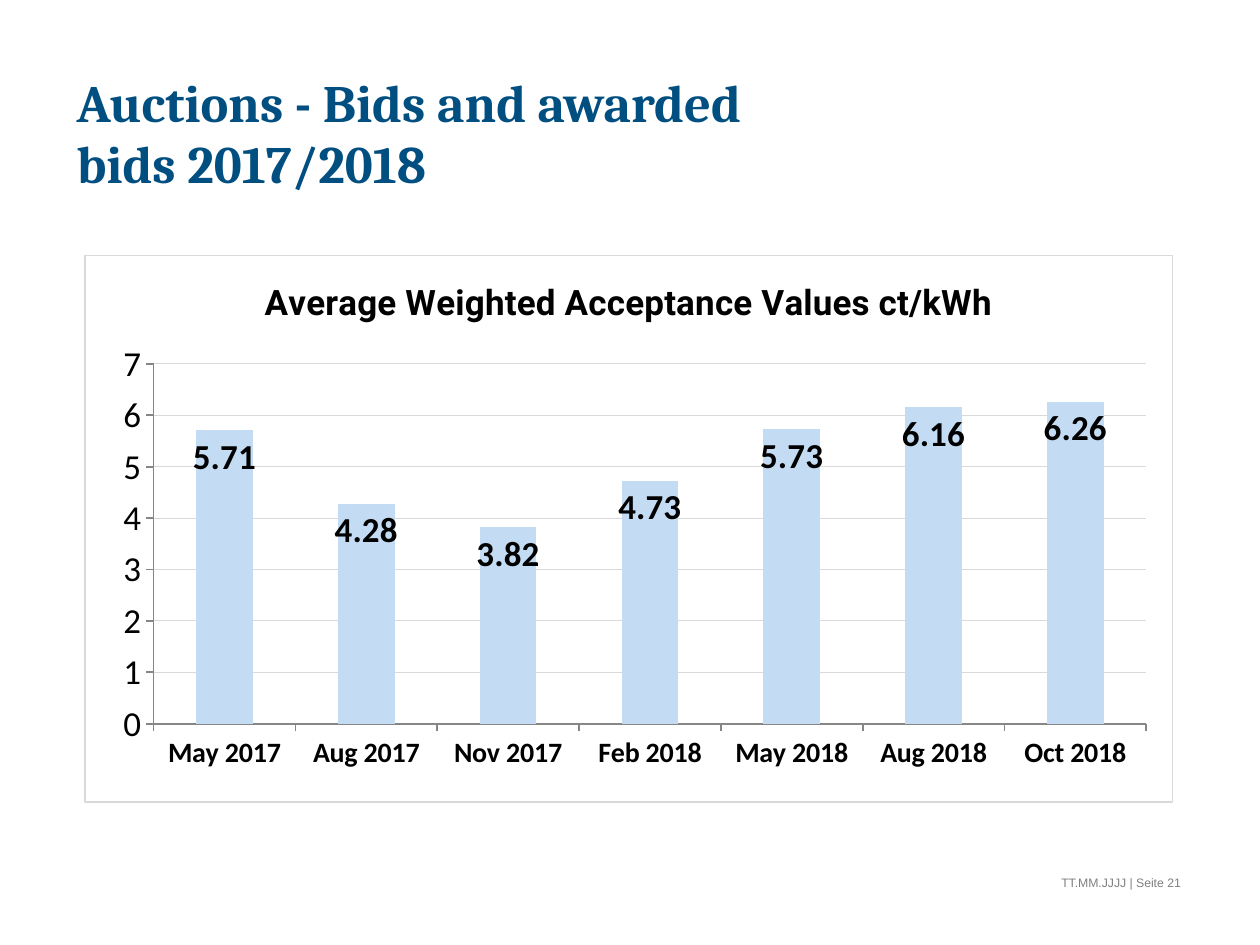
from lxml.etree import fromstring
from pptx import Presentation
from pptx.chart.data import CategoryChartData as Data
from pptx.dml.color import RGBColor as RGB
from pptx.enum.chart import XL_CHART_TYPE as Kind, XL_LABEL_POSITION as Pos, XL_TICK_MARK as Tick
from pptx.enum.text import PP_ALIGN as Align
from pptx.oxml.ns import nsdecls
from pptx.util import Inches, Pt

THEME = {
    "title": {"name": "Cambria", "size": Pt(30), "bold": True, "color": "004F80"},
    "foot": {"name": "Arial", "size": Pt(7), "bold": False, "color": "808080"},
    "base": {"name": "Times New Roman", "size": Pt(10), "color": "000000"},
    "head": {"name": "Roboto", "size": Pt(20), "bold": True, "color": "000000"},
    "cat": {"name": "Calibri", "size": Pt(16), "bold": True, "color": "000000"},
    "val": {"name": "Calibri", "size": Pt(20), "bold": False, "color": "000000"},
    "label": {"name": "Calibri", "size": Pt(20), "bold": True, "color": "000000"},
    "bar": "C3DBF3", "grid": "D9D9D9", "axis": "868686",
}


def style(font, key):
    for name, val in THEME[key].items():
        if name == "color":
            font.color.rgb = RGB.from_string(val)
        else:
            setattr(font, name, val)


def stroke(line, key, width):
    line.color.rgb = RGB.from_string(THEME[key])
    line.width = Pt(width)


deck = Presentation()
deck.slide_width, deck.slide_height = Inches(10), Inches(7.5)
slide = deck.slides.add_slide(deck.slide_layouts[6])

# Title and footer
for key, text, area, align, gap in (
    ("title", "Auctions - Bids and awarded bids 2017/2018",
     (0.51, 0.52, 6.3, 1.07), Align.LEFT, Pt(35)),
    ("foot", "TT.MM.JJJJ | Seite 21", (6.3, 6.9, 3.17, 0.4), Align.RIGHT, None),
):
    frame = slide.shapes.add_textbox(*map(Inches, area)).text_frame
    frame.word_wrap = True
    para = frame.paragraphs[0]
    para.alignment, para.line_spacing = align, gap
    run = para.add_run()
    run.text = text
    style(run.font, key)

# Chart data
data = Data()
data.categories = ["May 2017", "Aug 2017", "Nov 2017", "Feb 2018",
                   "May 2018", "Aug 2018", "Oct 2018"]
data.add_series("Series 1", (5.71, 4.28, 3.82, 4.73, 5.73, 6.16, 6.26))
area = map(Inches, (0.67, 2.02, 8.64, 4.35))
chart = slide.shapes.add_chart(Kind.COLUMN_CLUSTERED, *area, data).chart
style(chart.font, "base")
chart.has_legend = False

# Chart title
chart.has_title = True
para = chart.chart_title.text_frame.paragraphs[0]
run = para.add_run()
run.text = "Average Weighted Acceptance Values ct/kWh"
style(run.font, "head")

# Bars and labels
plot = chart.plots[0]
plot.gap_width, plot.vary_by_categories = 150, False
fill = plot.series[0].format.fill
fill.solid()
fill.fore_color.rgb = RGB.from_string(THEME["bar"])
plot.has_data_labels = True
labels = plot.data_labels
labels.show_value, labels.position = True, Pos.INSIDE_END
style(labels.font, "label")

# Axes
for axis, key in ((chart.category_axis, "cat"), (chart.value_axis, "val")):
    axis.major_tick_mark, axis.minor_tick_mark = Tick.OUTSIDE, Tick.NONE
    style(axis.tick_labels.font, key)
    stroke(axis.format.line, "axis", 1)
axis = chart.value_axis
axis.minimum_scale, axis.maximum_scale, axis.major_unit = 0, 7, 1
axis.has_major_gridlines = True
stroke(axis.major_gridlines.format.line, "grid", 0.5)

# Plot position and frame line
root = chart._chartSpace
zone = root.chart.plotArea
for old in zone.xpath("c:layout"):
    zone.remove(old)
spots = "".join(f'<c:{tag} val="{val}"/>' for tag, val in (
    ("layoutTarget", "inner"), ("xMode", "edge"), ("yMode", "edge"),
    ("x", 0.063), ("y", 0.199), ("w", 0.913), ("h", 0.658)))
zone.insert(0, fromstring(
    f'<c:layout {nsdecls("c")}><c:manualLayout>{spots}</c:manualLayout></c:layout>'))
root.chart.addnext(fromstring(
    f'<c:spPr {nsdecls("c", "a")}><a:noFill/><a:ln w="{Pt(0.75)}"><a:solidFill>'
    f'<a:srgbClr val="{THEME["grid"]}"/></a:solidFill></a:ln></c:spPr>'))

deck.save("out.pptx")
